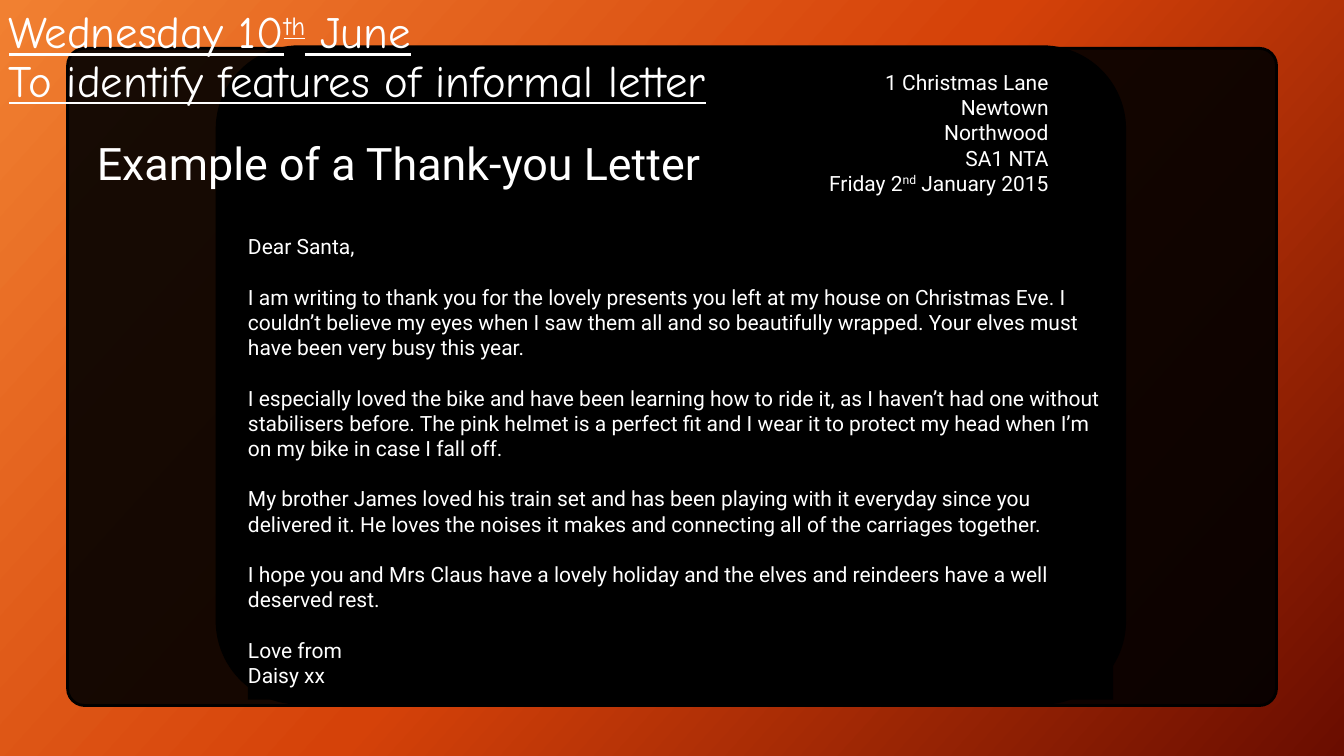
"""Builds a slide that shows an example thank-you letter."""
from copy import deepcopy

from lxml import etree
from pptx import Presentation
from pptx.dml.color import RGBColor
from pptx.enum.shapes import MSO_SHAPE
from pptx.enum.text import MSO_ANCHOR, MSO_AUTO_SIZE, PP_ALIGN
from pptx.oxml.ns import qn
from pptx.util import Inches, Pt

ROUNDED = MSO_SHAPE.ROUNDED_RECTANGLE
RECTANGLE = MSO_SHAPE.RECTANGLE
TOP, MIDDLE = MSO_ANCHOR.TOP, MSO_ANCHOR.MIDDLE
LEFT, RIGHT = PP_ALIGN.LEFT, PP_ALIGN.RIGHT
NO_AUTOFIT = MSO_AUTO_SIZE.NONE
TITLE_ONLY = 5

BACKDROP = [(0, "F18031"), (0.5, "D54209"), (1, "6A0D00")]
HEADING = ["Wednesday 10^th^ June", "To identify features of informal letter"]
ADDRESS = ["1 Christmas Lane", "Newtown", "Northwood", "SA1 NTA", "Friday 2^nd^ January 2015"]
LETTER = [
    "Dear Santa,",
    "I am writing to thank you for the lovely presents you left at my house on Christmas Eve. "
    "I couldn’t believe my eyes when I saw them all and so beautifully wrapped. "
    "Your elves must have been very busy this year.",
    "I especially loved the bike and have been learning how to ride it, as I haven’t had one "
    "without stabilisers before. The pink helmet is a perfect fit and I wear it to protect my "
    "head when I’m on my bike in case I fall off.",
    "My brother James loved his train set and has been playing with it everyday since you "
    "delivered it. He loves the noises it makes and connecting all of the carriages together.",
    "I hope you and Mrs Claus have a lovely holiday and the elves and reindeers have a well "
    "deserved rest.",
    "Love from",
    "Daisy xx",
]


def color(hex_code):
    """Turn a hex string into a colour."""
    return RGBColor.from_string(hex_code)


class LetterSlide:
    """Holds the style and the slide, placing elements by percent of its size."""

    ink, panel_color = "FFFFFF", "000000"
    body_font, heading_font = "Roboto", "Comic Neue"
    body_size, title_size = 15, 32

    def __init__(self, deck):
        """Add a title-only slide to the deck."""
        self.width, self.height = deck.slide_width, deck.slide_height
        self.slide = deck.slides.add_slide(deck.slide_layouts[TITLE_ONLY])

    def area(self, left, top, width, height):
        """Convert percentages of the slide to lengths."""
        across, down = self.width / 100, self.height / 100
        return int(left * across), int(top * down), int(width * across), int(height * down)

    def backdrop(self, stops, angle):
        """Fill the background with a linear gradient."""
        fill = self.slide.background.fill
        fill.gradient()
        fill.gradient_angle = 360 - angle
        stop_list = self.slide.element.find(".//" + qn("a:gsLst"))
        stop_list.append(deepcopy(stop_list[-1]))
        for stop, (position, shade) in zip(fill.gradient_stops, stops):
            stop.position = position
            stop.color.rgb = color(shade)

    def panel(self, place, kind=ROUNDED, corner=None, opacity=100, border=0):
        """Draw a dark panel."""
        panel = self.slide.shapes.add_shape(kind, *self.area(*place))
        panel.shadow.inherit = False
        panel.fill.solid()
        panel.fill.fore_color.rgb = color(self.panel_color)
        if opacity < 100:
            shade = panel.element.spPr.find(".//" + qn("a:srgbClr"))
            etree.SubElement(shade, qn("a:alpha")).set("val", str(opacity * 1000))
        if border:
            panel.line.color.rgb = color(self.panel_color)
            panel.line.width = Pt(border)
        else:
            panel.line.fill.background()
        if corner:
            panel.adjustments[0] = corner
        return panel

    def typeset(self, holder, lines, size, font, anchor=TOP, align=LEFT, spacing=1.0, underline=False):
        """Set one paragraph per line, raising the parts between carets."""
        frame = holder.text_frame
        frame.word_wrap = True
        frame.auto_size = NO_AUTOFIT
        frame.vertical_anchor = anchor
        frame.text = "\n".join(lines)
        for paragraph, line in zip(frame.paragraphs, lines):
            paragraph.alignment = align
            paragraph.line_spacing = spacing
            paragraph.space_before = Pt(0)
            first, *others = line.split("^")
            paragraph.text = first
            for part in others:
                paragraph.add_run().text = part
            for index, run in enumerate(paragraph.runs):
                run.font.size = Pt(size)
                run.font.name = font
                run.font.color.rgb = color(self.ink)
                run.font.underline = underline
                if index % 2:
                    run._r.get_or_add_rPr().set("baseline", "30000")
        return frame

    def title(self, place, text):
        """Place the title in front of the panels."""
        title = self.slide.shapes.title
        title.left, title.top, title.width, title.height = self.area(*place)
        self.slide.shapes.element.append(title.element)
        self.typeset(title, [text], self.title_size, self.body_font, MIDDLE, spacing=0.9)

    def heading(self, place, lines):
        """Add the underlined lesson heading."""
        box = self.slide.shapes.add_textbox(*self.area(*place))
        self.typeset(box, lines, self.title_size, self.heading_font, MIDDLE, spacing=0.9, underline=True)

    def address(self, place, lines):
        """Add the sender's address, its first line set in from the right."""
        box = self.slide.shapes.add_textbox(*self.area(*place))
        frame = self.typeset(box, lines, self.body_size, self.body_font, align=RIGHT)
        frame.paragraphs[0]._p.get_or_add_pPr().set("marR", str(Inches(0.24)))

    def letter(self, place, lines):
        """Add the letter, with a line's gap before all but the signature."""
        sheet = self.panel(place, RECTANGLE)
        frame = self.typeset(sheet, lines, self.body_size, self.body_font)
        frame.margin_left = frame.margin_right = 0
        frame.margin_top = frame.margin_bottom = Inches(0.08)
        for paragraph in frame.paragraphs[1:-1]:
            paragraph.space_before = Pt(18)


def main():
    """Build and save the deck."""
    deck = Presentation()
    deck.slide_width, deck.slide_height = Inches(13.33), Inches(7.5)
    page = LetterSlide(deck)
    page.backdrop(BACKDROP, angle=42)
    page.panel((5.03, 6.4, 89.95, 86.93), corner=0.026, opacity=90, border=2)
    page.panel((16.05, 6, 67.74, 87.2), corner=0.127)
    page.title((6.45, 14.67, 67.52, 14.53), "Example of a Thank-you Letter")
    page.letter((18.45, 29.87, 64.37, 62.67), LETTER)
    page.address((17.33, 8.53, 63.24, 18.13), ADDRESS)
    page.heading((-0.07, -0.13, 72.32, 15.73), HEADING)
    deck.save("out.pptx")


if __name__ == "__main__":
    main()
